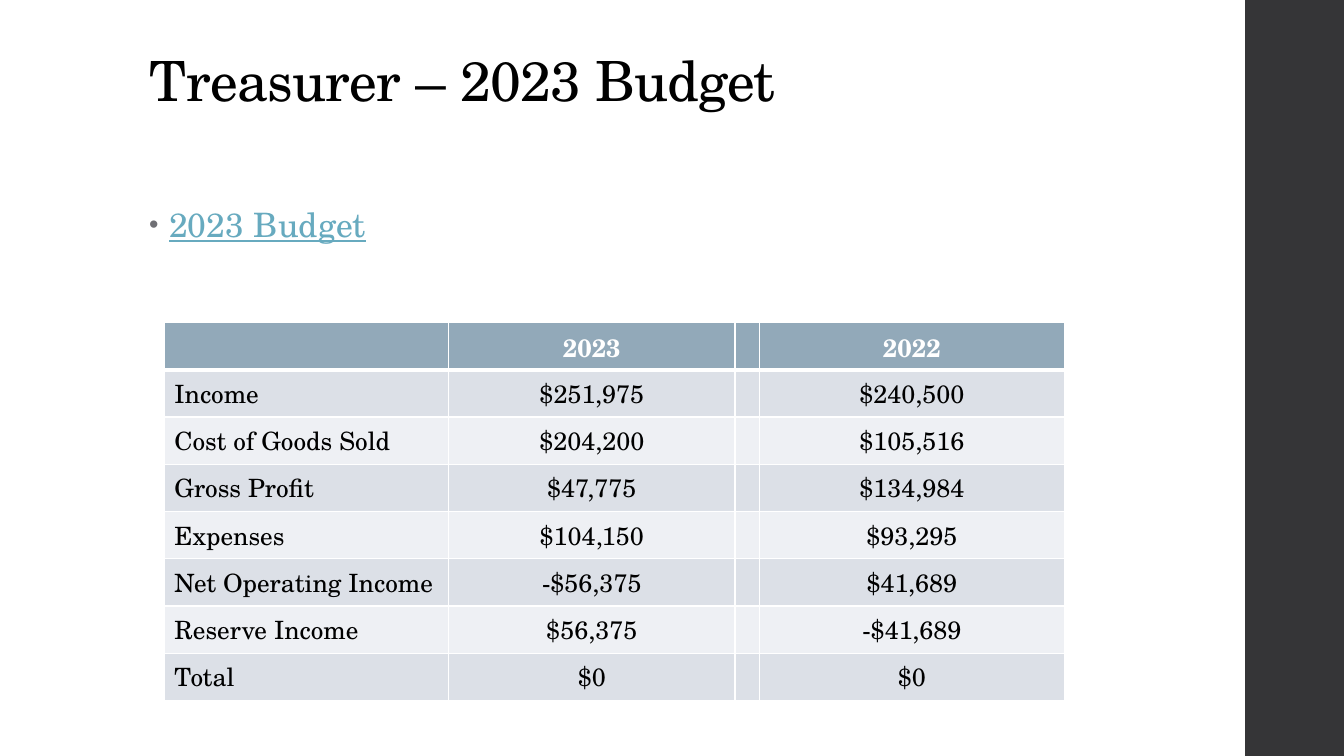
from pptx import Presentation, util as u
from pptx.dml import color
from pptx.enum import shapes, text
from pptx.oxml import ns
from lxml import etree

FACE = "TeX Gyre Schola"
ROWS = [
    ("", "2023", "", "2022"),
    ("Income", "$251,975", "", "$240,500"),
    ("Cost of Goods Sold", "$204,200", "", "$105,516"),
    ("Gross Profit", "$47,775", "", "$134,984"),
    ("Expenses", "$104,150", "", "$93,295"),
    ("Net Operating Income", "-$56,375", "", "$41,689"),
    ("Reserve Income", "$56,375", "", "-$41,689"),
    ("Total", "$0", "", "$0"),
]
WIDTHS = (2.82, 2.84, 0.24, 3.03)


def rgb(code):
    return color.RGBColor.from_string(code)


def node(parent, tag, **attrs):
    item = etree.SubElement(parent, ns.qn(tag))
    for key, value in attrs.items():
        item.set(key, str(value))
    return item


def style(font, shade, **looks):
    for key, value in {"name": FACE, **looks}.items():
        setattr(font, key, value)
    font.color.rgb = rgb(shade)


def place(shape, box):
    for key, value in zip(("left", "top", "width", "height"), box):
        setattr(shape, key, u.Inches(value))


def write(para, words, shade, gap, **looks):
    run = para.add_run()
    run.text = words
    style(run.font, shade, **looks)
    run.font._element.set("spc", str(gap))


def side(slide, box):
    bar = slide.shapes.add_shape(
        shapes.MSO_SHAPE.RECTANGLE, *map(u.Inches, box))
    bar.shadow.inherit = False
    bar.fill.solid()
    bar.fill.fore_color.rgb = rgb("353537")
    bar.line.fill.background()


def head(slide, box):
    title = slide.shapes.title
    place(title, box)
    frame = title.text_frame
    frame.auto_size = text.MSO_AUTO_SIZE.NONE
    frame.vertical_anchor = text.MSO_ANCHOR.BOTTOM
    para = frame.paragraphs[0]
    para.alignment = text.PP_ALIGN.LEFT
    write(para, "Treasurer – 2023 Budget", "000000", -50, size=u.Pt(39.6))


def body(slide, box):
    frame = slide.shapes.add_textbox(*map(u.Inches, box)).text_frame
    frame.word_wrap = True
    para = frame.paragraphs[0]
    para.line_spacing = 0.95
    para.space_after = u.Pt(2)
    props = para._p.get_or_add_pPr()
    props.set("marL", str(u.Inches(0.2)))
    props.set("indent", str(u.Inches(-0.2)))
    node(node(props, "a:buClr"), "a:srgbClr", val="6F6F74")
    node(props, "a:buSzPct", val=80000)
    node(props, "a:buFont", typeface="Arial")
    node(props, "a:buChar", char="•")
    write(para, "2023 Budget", "67AABF", 10, size=u.Pt(24), underline=True)


def edge(cell, top):
    props = cell._tc.get_or_add_tcPr()
    for name in "LRTB":
        thick = top and name == "B"
        line = node(props, "a:ln" + name, w=u.Pt(3 if thick else 1))
        node(node(line, "a:solidFill"), "a:srgbClr", val="FFFFFF")


def grid(slide, box):
    table = slide.shapes.add_table(
        len(ROWS), len(WIDTHS), *map(u.Inches, box)).table
    for col, width in zip(table.columns, WIDTHS):
        col.width = u.Inches(width)
    for i, row in enumerate(ROWS):
        table.rows[i].height = u.Inches(box[3] / len(ROWS))
        for j, words in enumerate(row):
            cell = table.cell(i, j)
            edge(cell, i == 0)
            cell.fill.solid()
            tint = "DCE0E7" if i % 2 else "EEF0F4"
            cell.fill.fore_color.rgb = rgb(tint if i else "92A9B9")
            cell.text = words
            para = cell.text_frame.paragraphs[0]
            if j:
                para.alignment = text.PP_ALIGN.CENTER
            shade = "000000" if i else "FFFFFF"
            for run in para.runs:
                style(run.font, shade, size=u.Pt(18), bold=i == 0)


def main():
    deck = Presentation()
    deck.slide_width = u.Inches(13.33)
    deck.slide_height = u.Inches(7.5)
    slide = deck.slides.add_slide(deck.slide_layouts[5])
    side(slide, (12.35, 0, 1, 7.5))
    head(slide, (1.38, 0.4, 10.6, 0.77))
    body(slide, (1.38, 2, 9.4, 4.76))
    grid(slide, (1.63, 3.2, 8.93, 3.75))
    deck.save("out.pptx")


if __name__ == "__main__":
    main()
